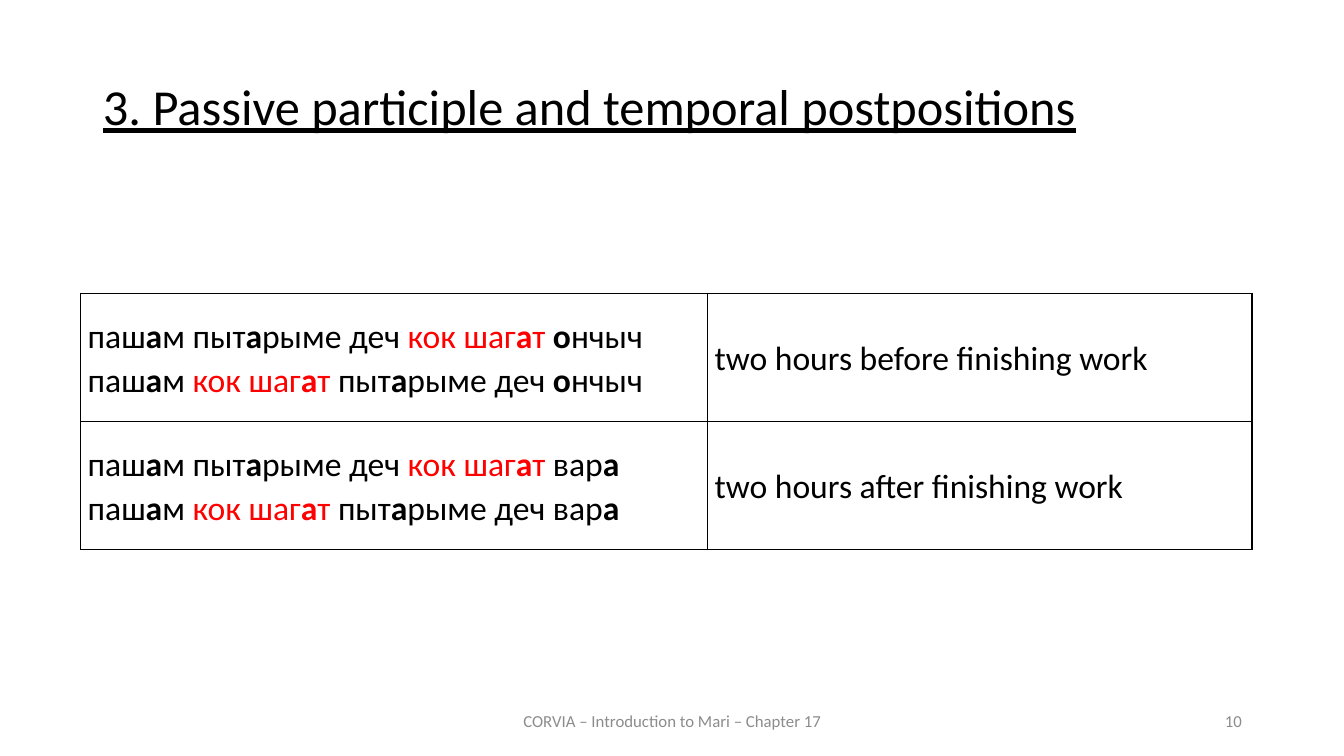
from lxml.etree import SubElement
from pptx import Presentation
from pptx.dml.color import RGBColor
from pptx.enum.text import MSO_ANCHOR as Anchor, MSO_AUTO_SIZE as AutoSize, PP_ALIGN as Align
from pptx.oxml.ns import qn
from pptx.util import Cm, Pt


def rgb(value):
    return RGBColor.from_string(value)


def apply(target, values):
    for name, value in values.items():
        setattr(target, name, value)


class Deck:
    FONT, BLACK, RED, GREY = "Calibri", "000000", "FF0000", "8C8C8C"

    def __init__(self):
        self.prs = Presentation()
        apply(self.prs, dict(slide_width=Cm(33.87), slide_height=Cm(19.05)))
        self.s = self.prs.slides.add_slide(self.prs.slide_layouts[5])

    def run(self, p, text, size, color, **style):
        r = p.add_run()
        r.text = text
        apply(r.font, dict(name=self.FONT, size=Pt(size), **style))
        r.font.color.rgb = rgb(color)

    def title(self, text, left, top, width, height):
        sp = self.s.shapes.title
        apply(sp, dict(left=Cm(left), top=Cm(top), width=Cm(width), height=Cm(height)))
        tf = sp.text_frame
        apply(tf, dict(word_wrap=True, auto_size=AutoSize.NONE, vertical_anchor=Anchor.TOP))
        p = tf.paragraphs[0]
        apply(p, dict(alignment=Align.JUSTIFY, line_spacing=0.9, space_before=Pt(12)))
        self.run(p, text, 36, self.BLACK, underline=True)

    def footer(self, text, left, width, align):
        sp = self.s.shapes.add_textbox(Cm(left), Cm(17.65), Cm(width), Cm(1.02))
        tf = sp.text_frame
        apply(tf, dict(word_wrap=True, vertical_anchor=Anchor.MIDDLE))
        p = tf.paragraphs[0]
        p.alignment = align
        self.run(p, text, 12, self.GREY)

    def marked(self, p, text):
        """Bars enclose red text, asterisks enclose bold letters."""
        for i, part in enumerate(text.split("|")):
            for j, piece in enumerate(part.split("*")):
                if piece:
                    self.run(p, piece, 24, self.RED if i % 2 else self.BLACK, bold=j % 2 == 1)

    def borders(self, cell):
        tcPr = cell._tc.get_or_add_tcPr()
        for side in "LRTB":
            ln = SubElement(tcPr, qn(f"a:ln{side}"), w=str(Pt(1)))
            fill = SubElement(ln, qn("a:solidFill"))
            SubElement(fill, qn("a:srgbClr"), val=self.BLACK)

    def cell(self, cell, lines):
        apply(cell, dict(vertical_anchor=Anchor.MIDDLE, margin_left=Cm(0.18),
                         margin_right=Cm(0.18), margin_top=0, margin_bottom=0))
        tf = cell.text_frame
        for i, line in enumerate(lines):
            p = tf.add_paragraph() if i else tf.paragraphs[0]
            p.line_spacing = 1.07
            self.marked(p, line)
        self.borders(cell)
        cell.fill.background()

    def table(self, rows, left, top, widths, row_height):
        frame = self.s.shapes.add_table(len(rows), len(widths), Cm(left), Cm(top),
                                        Cm(sum(widths)), Cm(row_height * len(rows)))
        table = frame.table
        apply(table, dict(first_row=False, horz_banding=False))
        for column, width in zip(table.columns, widths):
            column.width = Cm(width)
        for r, row in enumerate(rows):
            for c, lines in enumerate(row):
                self.cell(table.cell(r, c), lines)


def main():
    deck = Deck()

    # Title
    deck.title("3. Passive participle and temporal postpositions", 2.34, 1.93, 29.21, 2.11)

    # Phrases: both word orders beside the translation
    hours = "|кок шаг*а*т |"
    rows = []
    for postposition, english in (("*о*нчыч", "before"), ("вар*а*", "after")):
        mari = [f"паш*а*м пыт*а*рыме деч {hours}{postposition}",
                f"паш*а*м {hours}пыт*а*рыме деч {postposition}"]
        rows.append((mari, [f"two hours {english} finishing work"]))
    deck.table(rows, 2.03, 7.39, (15.8, 13.72), 3.23)

    # Footer and slide number
    deck.footer("CORVIA – Introduction to Mari – Chapter 17", 11.23, 11.43, Align.CENTER)
    deck.footer("10", 23.93, 7.62, Align.RIGHT)

    deck.prs.save("out.pptx")


if __name__ == "__main__":
    main()
